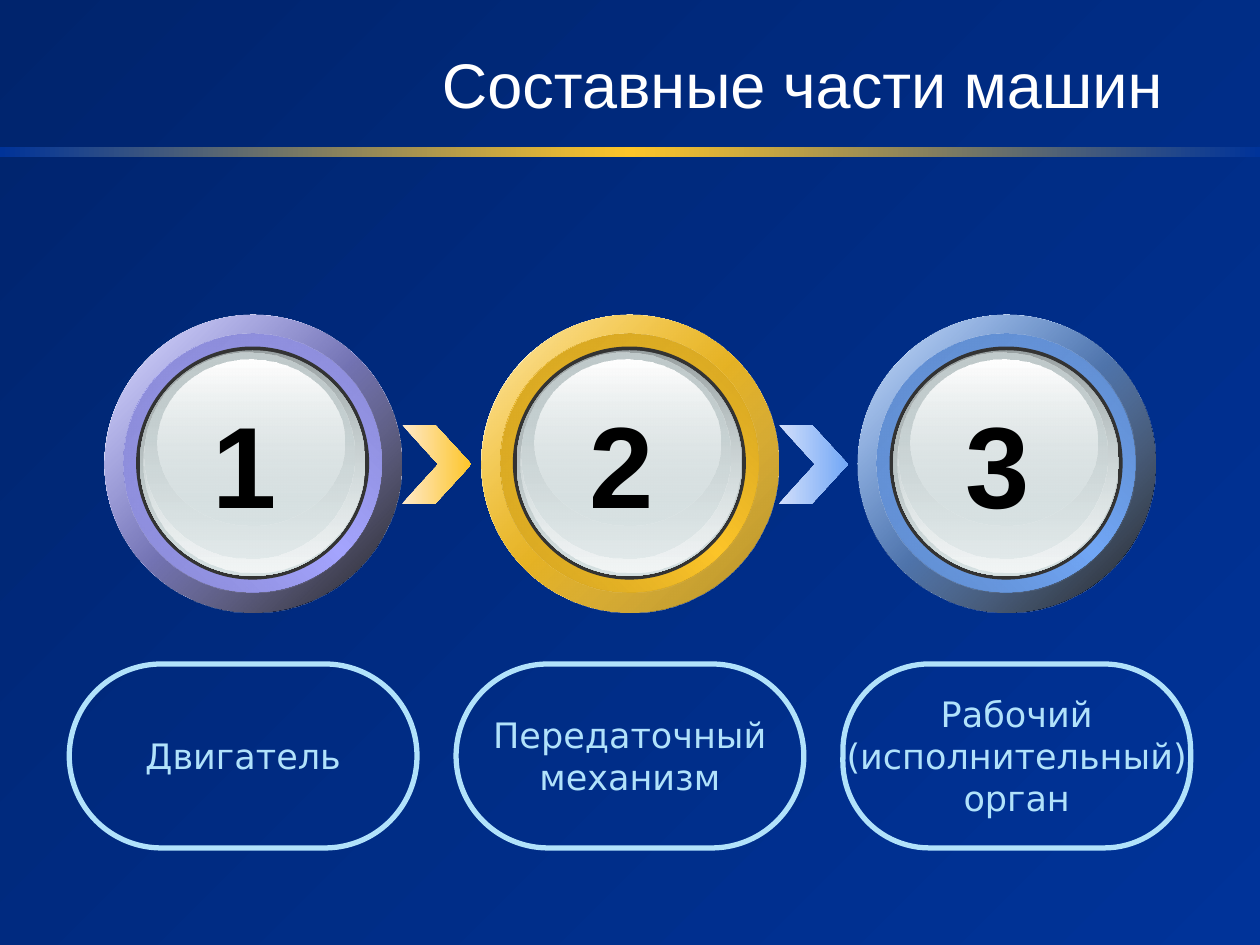
from pptx import Presentation
from pptx import util as u
from pptx.dml.color import RGBColor
from pptx.enum import shapes, text
from pptx.oxml import parse_xml
from pptx.oxml.ns import nsdecls, qn

TITLE = "Составные части машин"
PARTS = [
    ("1", ["Двигатель"], "violet"),
    ("2", ["Передаточный", "механизм"], "gold"),
    ("3", ["Рабочий", "(исполнительный)", "орган"], "blue"),
]

THEME = {
    "violet": {"base": "A5A5FF", "edge": "7E7EC3", "glow": "8787D1", "dark": ("000000", 90)},
    "gold": {"base": "FDC529", "edge": "C2971F", "glow": "D0A222", "dark": ("B58D1D", 100),
             "pale": "FEE9CA"},
    "blue": {"base": "72A7F6", "edge": "5780BC", "glow": "5E89CA", "dark": ("000000", 90),
             "pale": "D2DFFB"},
    "night": "00246D", "sea": "003399", "white": "FFFFFF", "black": "000000",
    "rim": "333333", "ice": "B1E2FB",
    "head": ("Arial", 36), "digit": ("Arial", 66), "label": ("DejaVu Sans", 20),
}

WIDE, HIGH = 10, 7.5
RING, STEP, TOP = 2.36, 2.99, 2.5
LEFT = (WIDE - 2 * STEP - RING) / 2
PILL, PITCH, TALL = 2.76, 3.07, 1.46
EDGE = (WIDE - 2 * PITCH - PILL) / 2

GLASS = [
    (0.28, 0.28, 1.79, 1.79, [(0, "99A1A2", 100), (100, "D6E1E2", 100)]),
    (0.31, 0.29, 1.75, 1.75, [(0, "D6E1E2", 0), (100, "F2F5F5", 100)]),
    (0.32, 0.30, 1.66, 1.63, [(0, "C1CBCC", 100), (100, "D6E1E2", 48)]),
    (0.42, 0.35, 1.48, 1.32, [(0, "FFFFFF", 100), (100, "D6E1E2", 38)]),
]


def rgb(tone):
    return RGBColor.from_string(tone)


def blend(fill, root, stops, turn):
    fill.gradient()
    old = root.find(".//" + qn("a:gradFill"))
    marks = "".join(
        f'<a:gs pos="{pos * 1000}"><a:srgbClr val="{tone}">'
        f'<a:alpha val="{alpha * 1000}"/></a:srgbClr></a:gs>'
        for pos, tone, alpha in stops)
    new = parse_xml(f'<a:gradFill {nsdecls("a")} rotWithShape="1"><a:gsLst>{marks}</a:gsLst>'
                    f'<a:lin ang="{turn * 60000}" scaled="0"/></a:gradFill>')
    old.getparent().replace(old, new)


def draw(slide, kind, box, stops=None, turn=0, solid=None):
    shape = slide.shapes.add_shape(kind, *map(u.Inches, box))
    shape.shadow.inherit = False
    shape.line.fill.background()
    if stops:
        blend(shape.fill, shape.element.spPr, stops, turn)
    elif solid:
        shape.fill.solid()
        shape.fill.fore_color.rgb = rgb(solid)
    else:
        shape.fill.background()
    return shape


def write(shape, lines, style, tone, align, bold=False):
    frame = shape.text_frame
    frame.text = "\n".join(lines)
    for para in frame.paragraphs:
        para.alignment = align
        for run in para.runs:
            run.font.name, size = THEME[style]
            run.font.size = u.Pt(size)
            run.font.bold = bold
            run.font.color.rgb = rgb(THEME[tone])


def ring(slide, left, look):
    base, edge, glow = look["base"], look["edge"], look["glow"]
    white = THEME["white"]
    bands = [
        (0, RING, [(0, white, 100), (50, base, 100), (100, white, 100)], 45),
        (0, RING, [(0, base, 32), (100, *look["dark"])], 45),
        (0.15, 2.05, [(0, edge, 100), (50, base, 100), (100, edge, 100)], 315),
        (0.15, 2.05, [(0, glow, 100), (100, base, 0)], 45),
    ]
    oval = shapes.MSO_SHAPE.OVAL
    for gap, size, stops, turn in bands:
        draw(slide, oval, (left + gap, TOP + gap, size, size), stops, turn)
    draw(slide, oval, (left + 0.25, TOP + 0.25, 1.85, 1.85), solid=THEME["rim"])
    for dx, dy, wide, high, stops in GLASS:
        draw(slide, oval, (left + dx, TOP + dy, wide, high), stops, 90)


def arrow(slide, left, look):
    stops = [(0, look["pale"], 100), (100, look["base"], 100)]
    mark = draw(slide, shapes.MSO_SHAPE.CHEVRON, (left, 3.37, 0.55, 0.63), stops)
    mark.adjustments[0] = 0.525


def digit(slide, left, name):
    box = slide.shapes.add_textbox(*map(u.Inches, (left + 0.75, 3.07, 0.72, 1.21)))
    box.text_frame.word_wrap = False
    box.text_frame.auto_size = text.MSO_AUTO_SIZE.SHAPE_TO_FIT_TEXT
    write(box, [name], "digit", "black", text.PP_ALIGN.CENTER, True)


def label(slide, left, lines):
    pill = draw(slide, shapes.MSO_SHAPE.ROUNDED_RECTANGLE, (left, 5.27, PILL, TALL))
    pill.adjustments[0] = 0.47 if len(lines) > 2 else 0.5
    pill.line.color.rgb = rgb(THEME["ice"])
    pill.line.width = u.Pt(3)
    pill.text_frame.word_wrap = False
    pill.text_frame.vertical_anchor = text.MSO_ANCHOR.MIDDLE
    write(pill, lines, "label", "ice", text.PP_ALIGN.CENTER)


def main():
    deck = Presentation()
    deck.slide_width, deck.slide_height = u.Inches(WIDE), u.Inches(HIGH)
    slide = deck.slides.add_slide(deck.slide_layouts[5])
    night, sea, gold = THEME["night"], THEME["sea"], THEME["gold"]["base"]
    blend(slide.background.fill, slide.element, [(0, night, 100), (100, sea, 100)], 45)
    draw(slide, shapes.MSO_SHAPE.RECTANGLE, (0, 1.17, WIDE, 0.08),
         [(0, sea, 100), (50, gold, 100), (100, sea, 100)])

    title = slide.shapes.title
    title.left, title.top, title.width, title.height = map(u.Inches, (1.08, 0.35, 8.25, 0.62))
    title.text_frame.vertical_anchor = text.MSO_ANCHOR.MIDDLE
    write(title, [TITLE], "head", "white", text.PP_ALIGN.RIGHT)

    for col, (name, lines, hue) in enumerate(PARTS):
        left = LEFT + col * STEP
        if col:
            arrow(slide, left - STEP + RING, THEME[hue])
        ring(slide, left, THEME[hue])
        digit(slide, left, name)
        label(slide, EDGE + col * PITCH, lines)
    deck.save("out.pptx")


if __name__ == "__main__":
    main()
